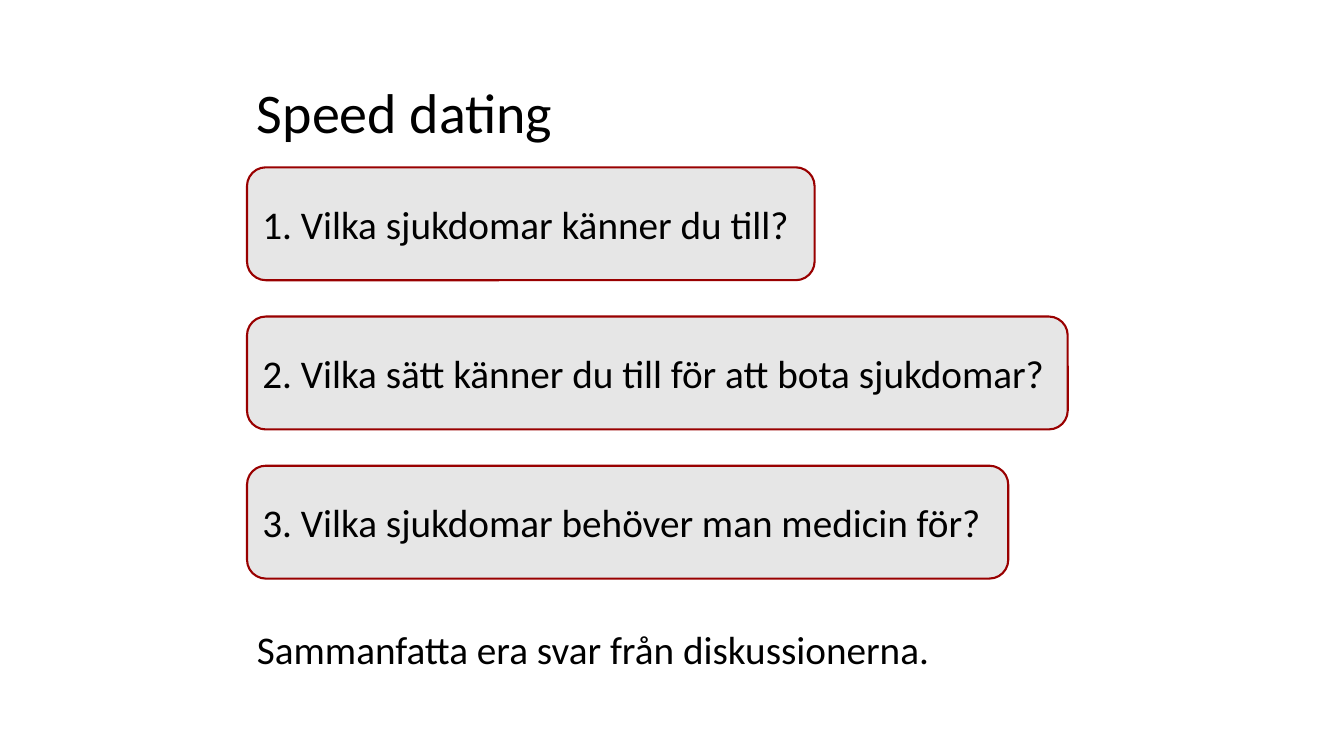
from pptx import Presentation
from pptx.dml.color import RGBColor
from pptx.enum.shapes import MSO_SHAPE
from pptx.enum.text import MSO_ANCHOR, MSO_AUTO_SIZE, PP_ALIGN
from pptx.util import Inches, Pt

ROUND = MSO_SHAPE.ROUNDED_RECTANGLE
MIDDLE, TOP = MSO_ANCHOR.MIDDLE, MSO_ANCHOR.TOP
GROW = MSO_AUTO_SIZE.SHAPE_TO_FIT_TEXT
LEFT = PP_ALIGN.LEFT

COLORS = {"text": "000000", "fill": "E6E6E6", "line": "990000"}
FONT = "Calibri"
LABELS = [
    ("Speed dating", 0.72, 5.63, 0.77, 40),
    ("Sammanfatta era svar från diskussionerna.", 6.15, 9.32, 0.57, 28),
]
CARDS = [
    ("1. Vilka sjukdomar känner du till?", 5.63),
    ("2. Vilka sätt känner du till för att bota sjukdomar?", 8.14),
    ("3. Vilka sjukdomar behöver man medicin för?", 7.55),
]
EDGE, START, STEP, HIGH = 2.45, 1.66, 1.48, 1.12


def color(name):
    return RGBColor.from_string(COLORS[name])


def write(shape, text, size, anchor):
    frame = shape.text_frame
    frame.word_wrap = True
    frame.vertical_anchor = anchor
    para = frame.paragraphs[0]
    para.alignment = LEFT
    run = para.add_run()
    run.text = text
    run.font.name = FONT
    run.font.size = Pt(size)
    run.font.color.rgb = color("text")


def add_label(slide, text, top, width, height, size):
    box = slide.shapes.add_textbox(
        Inches(EDGE), Inches(top), Inches(width), Inches(height))
    write(box, text, size, TOP)
    box.text_frame.auto_size = GROW


def add_card(slide, text, top, width):
    card = slide.shapes.add_shape(
        ROUND, Inches(EDGE), Inches(top), Inches(width), Inches(HIGH))
    card.shadow.inherit = False
    card.fill.solid()
    card.fill.fore_color.rgb = color("fill")
    card.line.color.rgb = color("line")
    card.line.width = Pt(1.5)
    write(card, text, 28, MIDDLE)


def main():
    deck = Presentation()
    deck.slide_width = Inches(13.33)
    deck.slide_height = Inches(7.5)
    slide = deck.slides.add_slide(deck.slide_layouts[6])
    for row, (text, width) in enumerate(CARDS):
        add_card(slide, text, START + row * STEP, width)
    for label in LABELS:
        add_label(slide, *label)
    deck.save("out.pptx")


if __name__ == "__main__":
    main()
